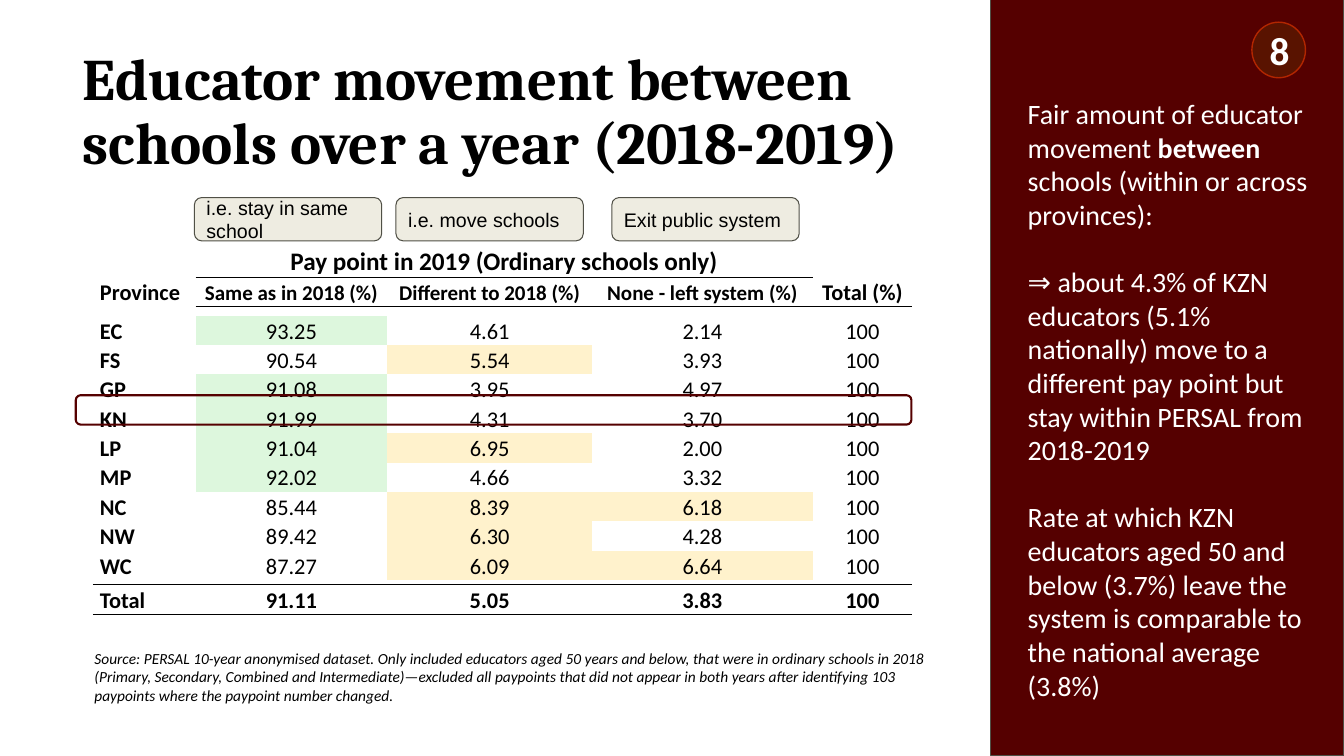
from dataclasses import dataclass

from lxml.etree import SubElement as Sub
from pptx import Presentation
from pptx.dml.color import RGBColor as Rgb
from pptx.enum.shapes import MSO_SHAPE as Kind
from pptx.enum.text import MSO_ANCHOR as Anchor, MSO_AUTO_SIZE as Fit, PP_ALIGN as Align
from pptx.oxml.ns import qn
from pptx.util import Cm, Pt

TITLE = "Educator movement between schools over a year (2018-2019)"
PAGE = "8"
NOTES = [
    "Fair amount of educator movement *between *schools (within or across provinces):",
    "⇒ about 4.3% of KZN educators (5.1% nationally) move to a different pay point "
    "but stay within PERSAL from 2018-2019",
    "Rate at which KZN educators aged 50 and below (3.7%) leave the system is "
    "comparable to the national average (3.8%)",
]
SOURCE = (
    "Source: PERSAL 10-year anonymised dataset. Only included educators aged 50 years "
    "and below, that were in ordinary schools in 2018 (Primary, Secondary, Combined and "
    "Intermediate)—excluded all paypoints that did not appear in both years after "
    "identifying 103 paypoints where the paypoint number changed."
)
TAGS = [("i.e. stay in same school", 4.9), ("i.e. move schools", 9.98), ("Exit public system", 15.42)]
SPAN = "Pay point in 2019 (Ordinary schools only)"
HEADS = ["Province", "Same as in 2018 (%)", "Different to 2018 (%)", "None - left system (%)", "Total (%)"]
RATES = [
    ("EC", "93.25", "4.61", "2.14", "100"),
    ("FS", "90.54", "5.54", "3.93", "100"),
    ("GP", "91.08", "3.95", "4.97", "100"),
    ("KN", "91.99", "4.31", "3.70", "100"),
    ("LP", "91.04", "6.95", "2.00", "100"),
    ("MP", "92.02", "4.66", "3.32", "100"),
    ("NC", "85.44", "8.39", "6.18", "100"),
    ("NW", "89.42", "6.30", "4.28", "100"),
    ("WC", "87.27", "6.09", "6.64", "100"),
]
TOTAL = ("Total", "91.11", "5.05", "3.83", "100")
BLANK = ("",) * 5
GRID = [("", SPAN, "", "", ""), HEADS, BLANK, *RATES, BLANK, TOTAL]
WIDTHS = [2.59, 4.83, 5.16, 5.56, 2.51]
FIRST, LAST = 3, len(GRID) - 1
GAPS = {2: (0.23, 4), LAST - 1: (0.12, 2)}
RULES = {0: range(1, 4), 1: range(1, 5), LAST - 1: range(5), LAST: range(5)}
LIMITS = {1: 91, 2: 5, 3: 5}
PLAIN = "{2D5ABB26-0587-4C30-8999-92F81FD0307C}"


@dataclass(frozen=True)
class Theme:
    """Colours, fonts and type sizes of the slide."""
    ink: str = "000000"
    paper: str = "FFFFFF"
    wine: str = "550000"
    edge: str = "505046"
    disc: str = "591300"
    rim: str = "B22600"
    sand: str = "EEECE1"
    green: str = "DDF7DD"
    gold: str = "FFF2CC"
    body: str = "Calibri"
    serif: str = "Cambria"
    sans: str = "Arial"
    huge: int = 42
    page: int = 28
    note: int = 20
    span: int = 18
    cell: int = 16
    head: int = 15
    tag: int = 14
    small: int = 11


T = Theme()


def write(frame, *texts, size, font=T.body, color=T.ink, bold=False, italic=False,
          align=Align.LEFT, line=None, after=0):
    """Fill a text frame with paragraphs; stars switch bold on and off."""
    frame.word_wrap = True
    for i, text in enumerate(texts):
        para = frame.add_paragraph() if i else frame.paragraphs[0]
        para.alignment, para.line_spacing, para.space_after = align, line, Pt(after)
        for j, part in enumerate(text.split("*")):
            run = para.add_run()
            run.text = part
            face = run.font
            face.size, face.name, face.italic = Pt(size), font, italic
            face.bold = bold != bool(j % 2)
            face.color.rgb = Rgb.from_string(color)


def shape(slide, kind, box, fill, edge, width):
    """Add a flat preset shape."""
    item = slide.shapes.add_shape(kind, *map(Cm, box))
    item.shadow.inherit = False
    if fill:
        item.fill.solid()
        item.fill.fore_color.rgb = Rgb.from_string(fill)
    else:
        item.fill.background()
    item.line.color.rgb = Rgb.from_string(edge)
    item.line.width = Pt(width)
    return item


def rule(cell):
    """Draw a thin line below a table cell."""
    props = cell._tc.get_or_add_tcPr()
    line = Sub(props, qn("a:lnB"), w=str(Pt(1)))
    Sub(Sub(line, qn("a:solidFill")), qn("a:srgbClr"), val=T.ink)


def paint(cell, row, col, text):
    """Shade a table cell by its rate."""
    if FIRST <= row < LAST - 1 and col in LIMITS and float(text) > LIMITS[col]:
        cell.fill.solid()
        cell.fill.fore_color.rgb = Rgb.from_string(T.green if col == 1 else T.gold)
    else:
        cell.fill.background()


def label(cell, row, col, text):
    """Set the text of a table cell."""
    cell.margin_left = cell.margin_right = Cm(0.18)
    cell.margin_top = cell.margin_bottom = 0
    cell.vertical_anchor = Anchor.BOTTOM
    if text:
        size = T.span if row == 0 else T.head if row == 1 and 0 < col < 4 else T.cell
        write(cell.text_frame, text, size=size, line=1.07,
              bold=col == 0 or row < FIRST or row == LAST,
              align=Align.CENTER if col else Align.LEFT)
    else:
        size = GAPS[row][1] if row in GAPS else T.cell
        Sub(cell.text_frame.paragraphs[0]._p, qn("a:endParaRPr"), sz=str(size * 100))


def rates(slide):
    """Add the table of rates by province."""
    tall = [GAPS[r][0] if r in GAPS else 0.74 for r in range(len(GRID))]
    tall[0] = 0.81
    frame = slide.shapes.add_table(len(GRID), 5, Cm(2.34), Cm(6.17), Cm(sum(WIDTHS)), Cm(sum(tall)))
    frame._element.find(".//" + qn("a:tableStyleId")).text = PLAIN
    table = frame.table
    table.first_row = table.horz_banding = False
    for col, wide in zip(table.columns, WIDTHS):
        col.width = Cm(wide)
    for row, high in zip(table.rows, tall):
        row.height = Cm(high)
    table.cell(0, 1).merge(table.cell(0, 3))
    for r, texts in enumerate(GRID):
        for c, text in enumerate(texts):
            cell = table.cell(r, c)
            label(cell, r, c, text)
            if c in RULES.get(r, ()):
                rule(cell)
            paint(cell, r, c, text)


def main():
    """Build and save the slide."""
    deck = Presentation()
    deck.slide_width, deck.slide_height = Cm(33.87), Cm(19.05)
    slide = deck.slides.add_slide(deck.slide_layouts[5])
    shape(slide, Kind.RECTANGLE, (24.97, 0, 8.9, 19.05), T.wine, T.edge, 0.75)

    title = slide.shapes.title
    title.left, title.top, title.width, title.height = map(Cm, (1.83, 1.02, 22.78, 3.68))
    title.text_frame.auto_size = Fit.NONE
    title.text_frame.vertical_anchor = Anchor.MIDDLE
    write(title.text_frame, TITLE, size=T.huge, font=T.serif, bold=True, line=0.9)

    side = slide.shapes.add_textbox(*map(Cm, (25.65, 2.31, 7.59, 15.93)))
    write(side.text_frame, *NOTES, size=T.note, color=T.paper, after=24)
    foot = slide.shapes.add_textbox(*map(Cm, (2.13, 16.23, 21.82, 1.88)))
    write(foot.text_frame, SOURCE, size=T.small, italic=True)
    rates(slide)

    disc = shape(slide, Kind.OVAL, (31.55, 0.56, 1.35, 1.4), T.disc, T.rim, 1)
    disc.text_frame.vertical_anchor = Anchor.MIDDLE
    write(disc.text_frame, PAGE, size=T.page, color=T.paper, bold=True, align=Align.CENTER)
    for text, left in TAGS:
        tag = shape(slide, Kind.ROUNDED_RECTANGLE, (left, 4.98, 4.72, 1.09), T.sand, T.edge, 0.75)
        frame = tag.text_frame
        frame.margin_top = frame.margin_bottom = Cm(0.25)
        frame.vertical_anchor = Anchor.MIDDLE
        write(frame, text, size=T.tag, font=T.sans)
    shape(slide, Kind.ROUNDED_RECTANGLE, (1.91, 9.96, 21.06, 0.74), None, T.wine, 1.5)
    deck.save("out.pptx")


if __name__ == "__main__":
    main()
